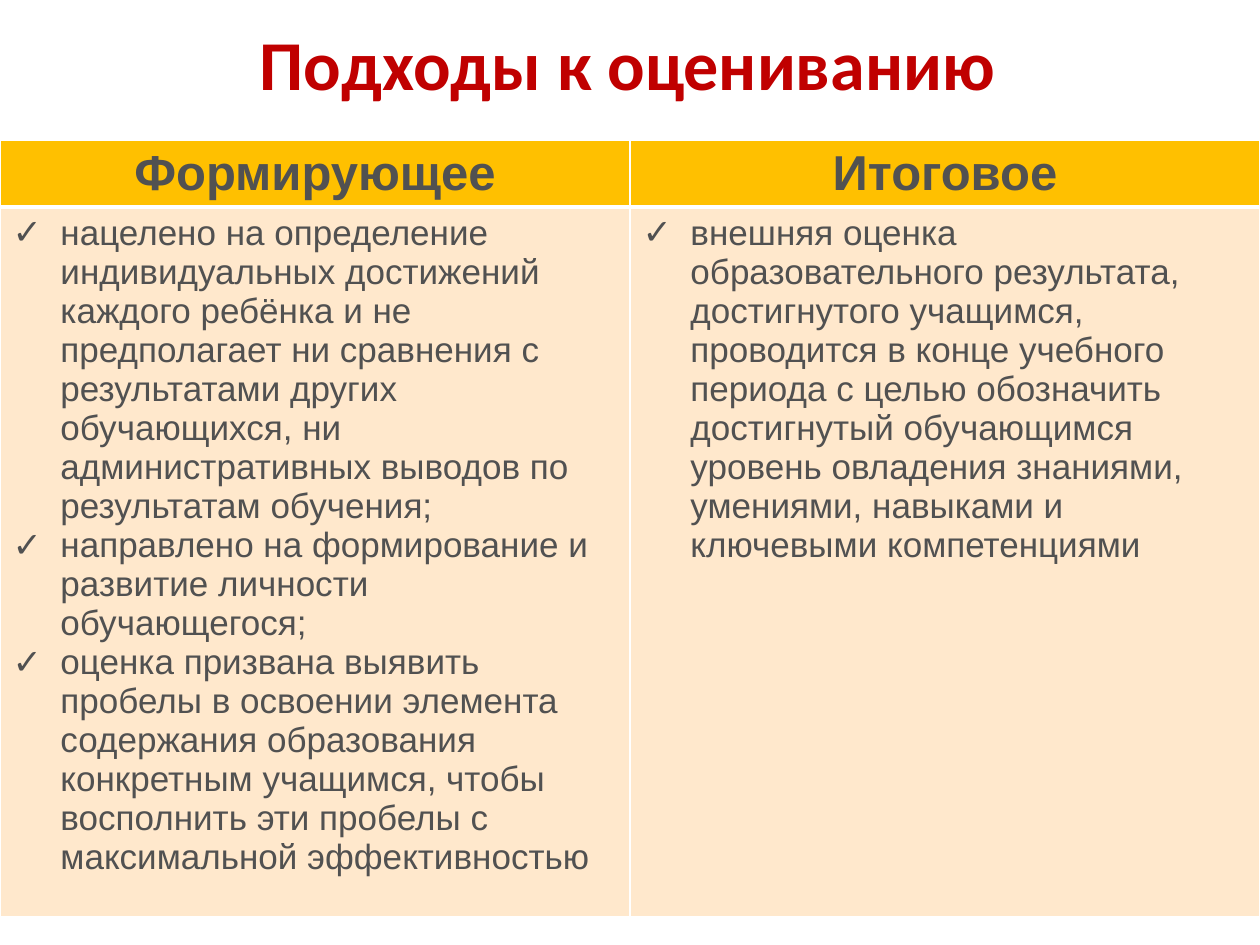
"""Build a slide comparing formative and summative assessment."""
from lxml import etree
from pptx import Presentation
from pptx.dml.color import RGBColor
from pptx.enum.text import MSO_ANCHOR, PP_ALIGN
from pptx.oxml.ns import qn
from pptx.util import Inches, Pt

CENTER, LEFT, MIDDLE = PP_ALIGN.CENTER, PP_ALIGN.LEFT, MSO_ANCHOR.MIDDLE
COLORS = {"title": "C00000", "text": "515151", "head": "FFC000",
          "body": "FFE8CC", "border": "FFFFFF"}
TITLE = "Подходы к оцениванию"
COLUMNS = {
    "Формирующее": [
        "нацелено на определение индивидуальных достижений каждого ребёнка и не "
        "предполагает ни сравнения с результатами других обучающихся, ни "
        "административных выводов по результатам обучения;",
        "направлено на формирование и развитие личности обучающегося;",
        "оценка призвана выявить пробелы в освоении элемента содержания образования "
        "конкретным учащимся, чтобы восполнить эти пробелы с максимальной "
        "эффективностью",
    ],
    "Итоговое": [
        "внешняя оценка образовательного результата, достигнутого учащимся, "
        "проводится в конце учебного периода с целью обозначить достигнутый "
        "обучающимся уровень овладения знаниями, умениями, навыками и ключевыми "
        "компетенциями",
    ],
}
FONTS = {
    "title": {"name": "Calibri", "size": Pt(40), "bold": True},
    "head": {"name": "Arial", "size": Pt(28), "bold": True},
    "body": {"name": "Arial", "size": Pt(20), "bold": False},
}
ROWS = {"head": 0.53, "body": 5.63}
INDENT = Inches(0.38)


def format_font(font, kind, color):
    for name, value in FONTS[kind].items():
        setattr(font, name, value)
    font.color.rgb = RGBColor.from_string(COLORS[color])


def add_borders(cell, bottom):
    tc_pr = cell._tc.get_or_add_tcPr()
    for i, (side, width) in enumerate({"L": 1, "R": 1, "T": 1, "B": bottom}.items()):
        ln = etree.Element(qn(f"a:ln{side}"), w=str(Pt(width)))
        fill = etree.SubElement(ln, qn("a:solidFill"))
        etree.SubElement(fill, qn("a:srgbClr"), val=COLORS["border"])
        tc_pr.insert(i, ln)


def add_bullet(p):
    p_pr = p._p.get_or_add_pPr()
    p_pr.set("marL", str(INDENT))
    p_pr.set("indent", str(-INDENT))
    etree.SubElement(p_pr, qn("a:buFont"), typeface="Arial")
    etree.SubElement(p_pr, qn("a:buChar"), char="✓")


def fill_cell(cell, kind, lines):
    cell.fill.solid()
    cell.fill.fore_color.rgb = RGBColor.from_string(COLORS[kind])
    add_borders(cell, 3 if kind == "head" else 1)
    tf = cell.text_frame
    for i, line in enumerate(lines):
        p = tf.add_paragraph() if i else tf.paragraphs[0]
        p.alignment = CENTER if kind == "head" else LEFT
        if kind == "body":
            add_bullet(p)
        r = p.add_run()
        r.text = line
        format_font(r.font, kind, "text")


def main():
    prs = Presentation()
    prs.slide_width, prs.slide_height = Inches(10), Inches(7.5)
    s = prs.slides.add_slide(prs.slide_layouts[5])

    title = s.shapes.title
    title.left, title.top, title.width, title.height = map(
        Inches, (0.65, 0.15, 8.66, 0.78))
    tf = title.text_frame
    tf.vertical_anchor = MIDDLE
    p = tf.paragraphs[0]
    p.alignment, p.line_spacing = CENTER, 0.9
    r = p.add_run()
    r.text = TITLE
    format_font(r.font, "title", "title")

    table = s.shapes.add_table(len(ROWS), len(COLUMNS), 0, Inches(1.11),
                               prs.slide_width, Inches(sum(ROWS.values()))).table
    for row, height in zip(table.rows, ROWS.values()):
        row.height = Inches(height)
    for col, (head, points) in enumerate(COLUMNS.items()):
        fill_cell(table.cell(0, col), "head", [head])
        fill_cell(table.cell(1, col), "body", points)

    prs.save("out.pptx")


if __name__ == "__main__":
    main()
